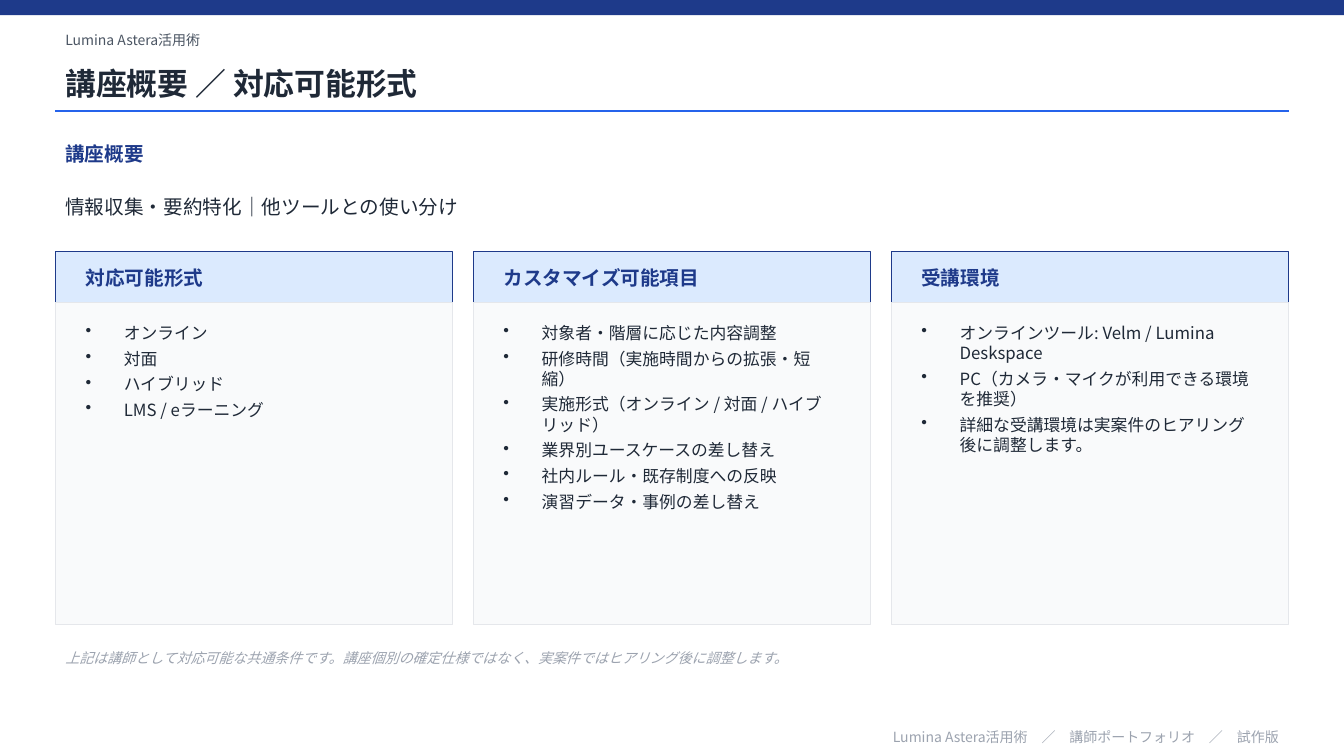
from lxml import etree
from pptx import Presentation
from pptx.dml.color import RGBColor
from pptx.enum.shapes import MSO_CONNECTOR, MSO_SHAPE
from pptx.enum.text import MSO_ANCHOR, PP_ALIGN
from pptx.oxml.ns import qn
from pptx.util import Inches, Pt

RECT = MSO_SHAPE.RECTANGLE
STRAIGHT = MSO_CONNECTOR.STRAIGHT
TOP, MIDDLE = MSO_ANCHOR.TOP, MSO_ANCHOR.MIDDLE
LEFT, RIGHT = PP_ALIGN.LEFT, PP_ALIGN.RIGHT

FONT = "Noto Sans CJK JP"
COLORS = {
    "navy": "1E3A8A", "blue": "2563EB", "pale_blue": "DBEAFE",
    "ink": "1F2937", "slate": "4B5563", "muted": "9CA3AF",
    "panel": "F9FAFB", "border": "E5E7EB",
}
MARGIN, CONTENT_WIDTH = 0.55, 12.23
CARD_WIDTH, CARD_STEP, CARD_PADDING = 3.94, 4.145, 0.2
BULLET_INDENT = Inches(0.38)
COURSE = "Lumina Astera活用術"

CARDS = [
    ("対応可能形式", ["オンライン", "対面", "ハイブリッド", "LMS / eラーニング"]),
    ("カスタマイズ可能項目", [
        "対象者・階層に応じた内容調整",
        "研修時間（実施時間からの拡張・短縮）",
        "実施形式（オンライン / 対面 / ハイブリッド）",
        "業界別ユースケースの差し替え",
        "社内ルール・既存制度への反映",
        "演習データ・事例の差し替え",
    ]),
    ("受講環境", [
        "オンラインツール: Velm / Lumina Deskspace",
        "PC（カメラ・マイクが利用できる環境を推奨）",
        "詳細な受講環境は実案件のヒアリング後に調整します。",
    ]),
]


def add_text(left, top, width, height, lines, size, color, bold=False,
             italic=False, align=LEFT, anchor=MIDDLE, bulleted=False):
    """Add a wrapped text box with one paragraph per line."""
    frame = slide.shapes.add_textbox(
        Inches(left), Inches(top), Inches(width), Inches(height)).text_frame
    frame.word_wrap = True
    frame.vertical_anchor = anchor
    frame.text = "\n".join(lines)
    for paragraph in frame.paragraphs:
        paragraph.alignment = align
        if bulleted:
            paragraph.space_after = Pt(4)
            properties = paragraph._p.get_or_add_pPr()
            properties.set("marL", str(BULLET_INDENT))
            properties.set("indent", str(-BULLET_INDENT))
            etree.SubElement(properties, qn("a:buChar")).set("char", "•")
        font = paragraph.font
        font.name, font.size = FONT, Pt(size)
        font.bold, font.italic = bold, italic
        font.color.rgb = RGBColor.from_string(COLORS[color])
        etree.SubElement(font._element, qn("a:ea")).set("typeface", FONT)


def add_block(left, top, width, height, fill, outline=None):
    block = slide.shapes.add_shape(
        RECT, Inches(left), Inches(top), Inches(width), Inches(height))
    block.shadow.inherit = False
    block.fill.solid()
    block.fill.fore_color.rgb = RGBColor.from_string(COLORS[fill])
    if outline:
        block.line.color.rgb = RGBColor.from_string(COLORS[outline])
        block.line.width = Pt(0.75)
    else:
        block.line.fill.background()


prs = Presentation()
prs.slide_width, prs.slide_height = Inches(13.33), Inches(7.5)
slide = prs.slides.add_slide(prs.slide_layouts[6])

# Header
add_block(0, 0, 13.33, 0.15, "navy")
add_text(MARGIN, 0.25, CONTENT_WIDTH, 0.3, [COURSE], 10, "slate")
add_text(MARGIN, 0.55, CONTENT_WIDTH, 0.55, ["講座概要 ／ 対応可能形式"], 22, "ink", bold=True)
title_rule = slide.shapes.add_connector(
    STRAIGHT, Inches(MARGIN), Inches(1.1), Inches(MARGIN + CONTENT_WIDTH), Inches(1.1))
title_rule.line.color.rgb = RGBColor.from_string(COLORS["blue"])
title_rule.line.width = Pt(1)
etree.SubElement(title_rule._element.spPr, qn("a:effectLst"))

# Overview
add_text(MARGIN, 1.35, CONTENT_WIDTH, 0.35, ["講座概要"], 14, "navy", bold=True)
add_text(MARGIN, 1.75, CONTENT_WIDTH, 0.6,
         ["情報収集・要約特化｜他ツールとの使い分け"], 14, "ink")

# Three cards
for column, (heading, items) in enumerate(CARDS):
    card_left = MARGIN + column * CARD_STEP
    text_left = card_left + CARD_PADDING
    text_width = CARD_WIDTH - 2 * CARD_PADDING
    add_block(card_left, 2.5, CARD_WIDTH, 0.5, "pale_blue", "navy")
    add_text(text_left, 2.5, text_width, 0.5, [heading], 14, "navy", bold=True)
    add_block(card_left, 3, CARD_WIDTH, 3.2, "panel", "border")
    add_text(text_left, 3.15, text_width, 2.85, items, 12, "ink", anchor=TOP, bulleted=True)

# Note and footer
add_text(MARGIN, 6.35, CONTENT_WIDTH, 0.35,
         ["上記は講師として対応可能な共通条件です。講座個別の確定仕様ではなく、"
          "実案件ではヒアリング後に調整します。"], 10, "muted", italic=True)
add_text(MARGIN, 7.2, CONTENT_WIDTH, 0.22,
         [f"{COURSE}　／　講師ポートフォリオ　／　試作版"], 10, "muted", align=RIGHT)

prs.save("out.pptx")
